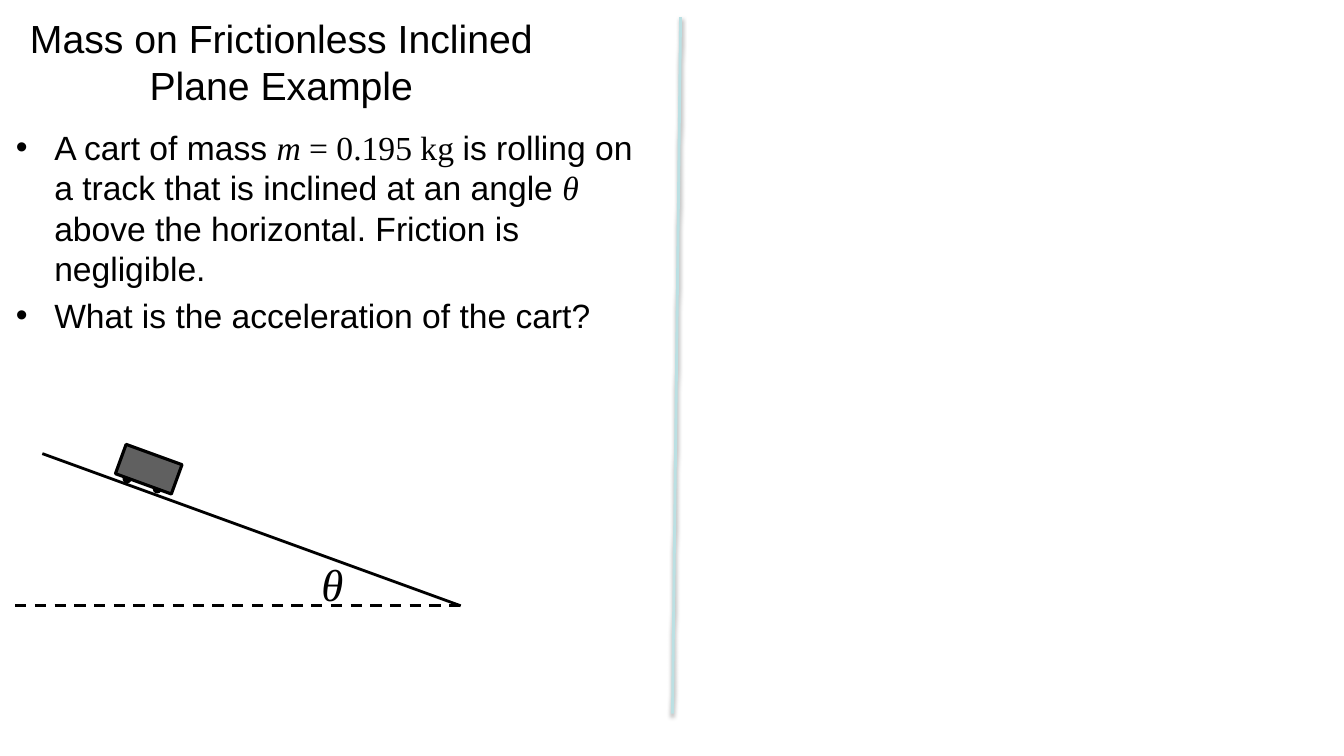
from lxml.etree import SubElement
from pptx import Presentation
from pptx.dml.color import RGBColor
from pptx.enum.dml import MSO_LINE
from pptx.enum.shapes import MSO_CONNECTOR, MSO_SHAPE
from pptx.enum.text import MSO_ANCHOR, MSO_AUTO_SIZE, PP_ALIGN
from pptx.oxml.ns import qn
from pptx.util import Inches, Pt

BLACK = RGBColor(0x00, 0x00, 0x00)
CART_GRAY = RGBColor(0x60, 0x60, 0x60)
PALE_TEAL = RGBColor(0xBB, 0xE0, 0xE3)

PLAIN = {"name": "Arial", "italic": False}
MATH = {"name": "Times New Roman", "italic": False}
VARIABLE = {"name": "Times New Roman", "italic": True}

PROBLEM = [
    [
        ("A cart of mass ", PLAIN),
        ("m", VARIABLE),
        (" = 0.195 kg ", MATH),
        ("is rolling on a track that is inclined at an angle ", PLAIN),
        ("θ", VARIABLE),
        (" above the horizontal. Friction is negligible.", PLAIN),
    ],
    [("What is the acceleration of the cart?", PLAIN)],
]


def apply_format(target, values):
    for attribute, value in values.items():
        setattr(target, attribute, value)


class SlideBuilder:
    """Holds the slide and the style shared by its elements."""

    frame_format = {"word_wrap": True, "auto_size": MSO_AUTO_SIZE.NONE}
    bullet_indent = Inches(0.38)

    def __init__(self, slide):
        self.slide = slide

    def add_runs(self, paragraph, runs, size):
        for text, font_format in runs:
            run = paragraph.add_run()
            run.text = text
            apply_format(run.font, {**font_format, "size": Pt(size)})
            run.font.color.rgb = BLACK

    def title(self, text, box, size):
        title = self.slide.shapes.title
        sides = ("left", "top", "width", "height")
        apply_format(title, dict(zip(sides, map(Inches, box))))
        apply_format(
            title.text_frame,
            {**self.frame_format, "vertical_anchor": MSO_ANCHOR.MIDDLE},
        )
        paragraph = title.text_frame.paragraphs[0]
        paragraph.alignment = PP_ALIGN.CENTER
        self.add_runs(paragraph, [(text, PLAIN)], size)

    def text(self, paragraphs, box, size, bulleted=False):
        frame = self.slide.shapes.add_textbox(*map(Inches, box)).text_frame
        apply_format(frame, self.frame_format)
        for index, runs in enumerate(paragraphs):
            paragraph = frame.add_paragraph() if index else frame.paragraphs[0]
            paragraph.space_before = Pt(size * 0.2)
            if bulleted:
                self.bullet(paragraph)
            self.add_runs(paragraph, runs, size)

    def bullet(self, paragraph):
        properties = paragraph._p.get_or_add_pPr()
        properties.set("marL", str(self.bullet_indent))
        properties.set("indent", str(-self.bullet_indent))
        SubElement(properties, qn("a:buFont"), typeface="Arial")
        SubElement(properties, qn("a:buChar"), char="•")

    def line(self, start, end, color=BLACK, dash=None, shadow=False):
        line = self.slide.shapes.add_connector(
            MSO_CONNECTOR.STRAIGHT, *map(Inches, start + end)
        )
        line.line.color.rgb = color
        apply_format(line.line, {"width": Pt(2), "dash_style": dash})
        effects = SubElement(line._element.spPr, qn("a:effectLst"))
        if shadow:
            self.drop_shadow(effects)

    def drop_shadow(self, effects):
        outer = SubElement(
            effects, qn("a:outerShdw"), blurRad=str(Pt(3.1)), dist=str(Pt(1.6)),
            dir="5400000", rotWithShape="0",
        )
        color = SubElement(outer, qn("a:srgbClr"), val=str(BLACK))
        SubElement(color, qn("a:alpha"), val="38000")

    def shape(self, kind, box, fill, line_width, rotation=0):
        shape = self.slide.shapes.add_shape(kind, *map(Inches, box))
        shape.shadow.inherit = False
        shape.rotation = rotation
        shape.fill.solid()
        shape.fill.fore_color.rgb = fill
        shape.line.color.rgb = BLACK
        shape.line.width = Pt(line_width)


def main():
    presentation = Presentation()
    apply_format(
        presentation,
        {"slide_width": Inches(13.33), "slide_height": Inches(7.5)},
    )
    title_only = presentation.slide_layouts.get_by_name("Title Only")
    builder = SlideBuilder(presentation.slides.add_slide(title_only))

    builder.title(
        "Mass on Frictionless Inclined Plane Example", (0.06, 0.13, 5.46, 0.95), 28
    )
    builder.text(PROBLEM, (0.06, 1.21, 6.35, 2.67), 24, bulleted=True)

    incline_foot = (4.57, 6.01)
    builder.line((0.42, 4.5), incline_foot)
    builder.line((0.15, 6.01), incline_foot, dash=MSO_LINE.DASH)
    builder.text([[("θ", VARIABLE)]], (3.09, 5.47, 0.53, 0.58), 32)

    for wheel_left, wheel_top in ((1.22, 4.71), (1.52, 4.81)):
        builder.shape(
            MSO_SHAPE.OVAL, (wheel_left, wheel_top, 0.08, 0.08), BLACK, 0.75
        )
    builder.shape(
        MSO_SHAPE.RECTANGLE, (1.18, 4.5, 0.59, 0.31), CART_GRAY, 2.25, rotation=20
    )

    builder.line((6.75, 0.17), (6.67, 7.08), color=PALE_TEAL, shadow=True)
    presentation.save("out.pptx")


if __name__ == "__main__":
    main()
